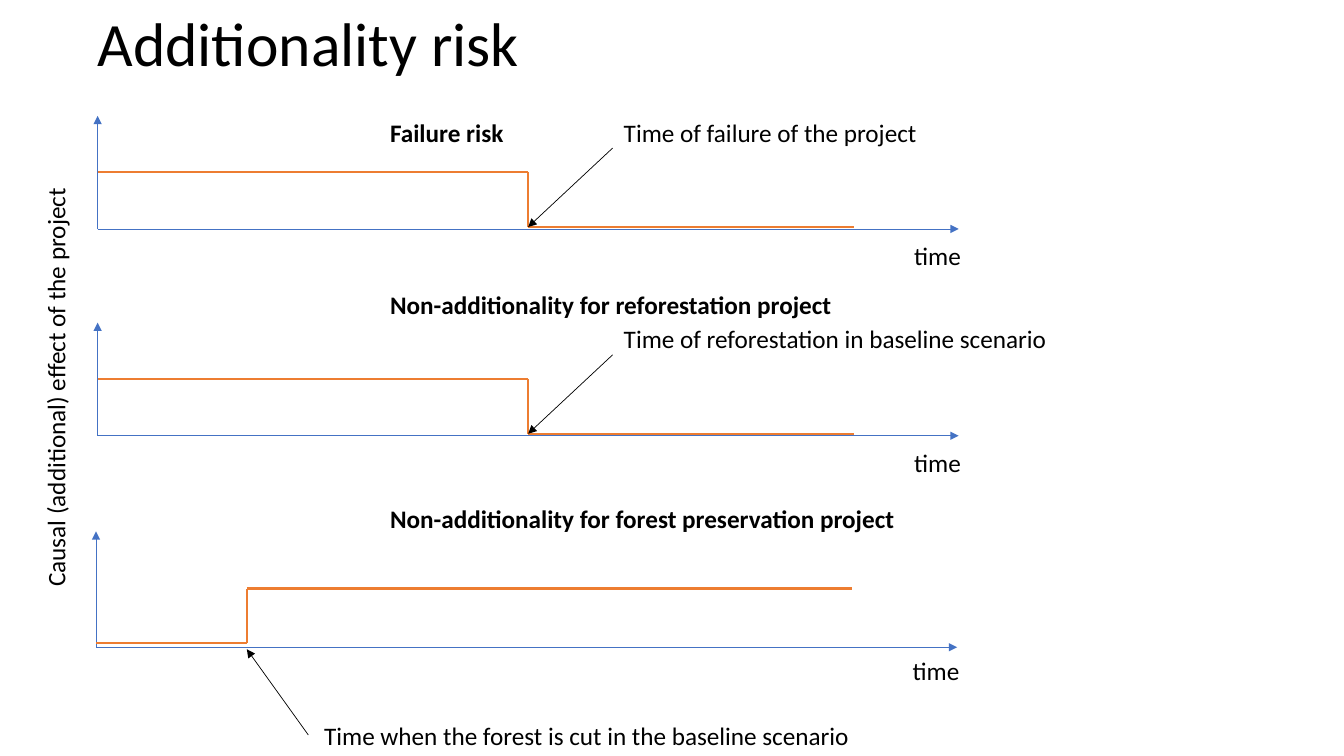
from itertools import pairwise

from lxml import etree
from pptx import Presentation
from pptx.dml.color import RGBColor
from pptx.enum.shapes import MSO_CONNECTOR
from pptx.enum.text import MSO_ANCHOR, MSO_AUTO_SIZE
from pptx.oxml.ns import qn
from pptx.util import Cm, Pt

STRAIGHT = MSO_CONNECTOR.STRAIGHT
MIDDLE = MSO_ANCHOR.MIDDLE
GROW = MSO_AUTO_SIZE.SHAPE_TO_FIT_TEXT

COLORS = {"axis": "4472C4", "curve": "ED7D31", "ink": "000000"}
WIDTHS = {"axis": 0.5, "curve": 1.5, "ink": 0.5}
LINE_HEIGHT = 1.02
PANEL_GAP = 5.21


class Painter:
    font = "Calibri"

    def __init__(self, page):
        self.page = page

    def text(self, words, left, top, width, height=LINE_HEIGHT, turn=0, frame=None, spacing=None, **style):
        box = self.page.shapes.add_textbox(Cm(left), Cm(top), Cm(width), Cm(height))
        box.rotation = turn
        frame_values = {"word_wrap": True, "auto_size": GROW} | (frame or {})
        for name, value in frame_values.items():
            setattr(box.text_frame, name, value)
        para = box.text_frame.paragraphs[0]
        para.line_spacing = spacing
        span = para.add_run()
        span.text = words
        for name, value in ({"name": self.font, "size": Pt(18)} | style).items():
            setattr(span.font, name, value)
        span.font.color.rgb = RGBColor.from_string(COLORS["ink"])

    def line(self, start, end, role, arrow=False):
        ends = [Cm(value) for value in (*start, *end)]
        connector = self.page.shapes.add_connector(STRAIGHT, *ends)
        connector.line.color.rgb = RGBColor.from_string(COLORS[role])
        connector.line.width = Pt(WIDTHS[role])
        if arrow:
            outline = connector.line._get_or_add_ln()
            etree.SubElement(outline, qn("a:tailEnd"), type="triangle")
        etree.SubElement(connector._element.spPr, qn("a:effectLst"))

    def axes(self, left, base, height):
        self.line((left, base), (left + 21.7, base), "axis", arrow=True)
        self.line((left, base), (left, base - height), "axis", arrow=True)

    def curve(self, points):
        for start, end in pairwise(points):
            self.line(start, end, "curve")

    def panel(self, left, base, height, levels, step, finish, time_top):
        first, second = levels
        self.axes(left, base, height)
        self.curve([(left, first), (step, first), (step, second), (finish, second)])
        self.text("time", left + 20.33, time_top, 4.09)


def main():
    deck = Presentation()
    deck.slide_width, deck.slide_height = Cm(33.87), Cm(19.05)
    page = deck.slides.add_slide(deck.slide_layouts[6])
    painter = Painter(page)

    painter.text("Additionality risk", 2.21, 0.13, 29.21, 2.11, spacing=0.9, size=Pt(44),
                 frame={"auto_size": MSO_AUTO_SIZE.NONE, "vertical_anchor": MIDDLE})
    painter.text("Causal (additional) effect of the project", -4.72, 8.41, 12.24, turn=270)

    headings = [
        ("Failure risk", 2.84, 12.32),
        ("Non-additionality for reforestation project", 7.16, 12.32),
        ("Non-additionality for forest preservation project", 12.57, 14.15),
    ]
    for words, top, width in headings:
        painter.text(words, 9.58, top, width, bold=True)

    falling_notes = ["Time of failure of the project", "Time of reforestation in baseline scenario"]
    for index, note in enumerate(falling_notes):
        shift = index * PANEL_GAP
        painter.panel(2.46, 5.77 + shift, 2.85, (4.34 + shift, 5.72 + shift), 13.31, 21.51, 5.94 + shift)
        painter.line((15.44, 3.73 + shift), (13.31, 5.72 + shift), "ink", arrow=True)
        painter.text(note, 15.47, 2.82 + shift, 12.55)

    painter.panel(2.42, 16.31, 2.92, (16.21, 14.83), 6.22, 21.46, 16.38)
    painter.line((7.77, 18.52), (6.22, 16.36), "ink", arrow=True)
    painter.text("Time when the forest is cut in the baseline scenario", 7.92, 18.03, 13.97)

    deck.save("out.pptx")


if __name__ == "__main__":
    main()
